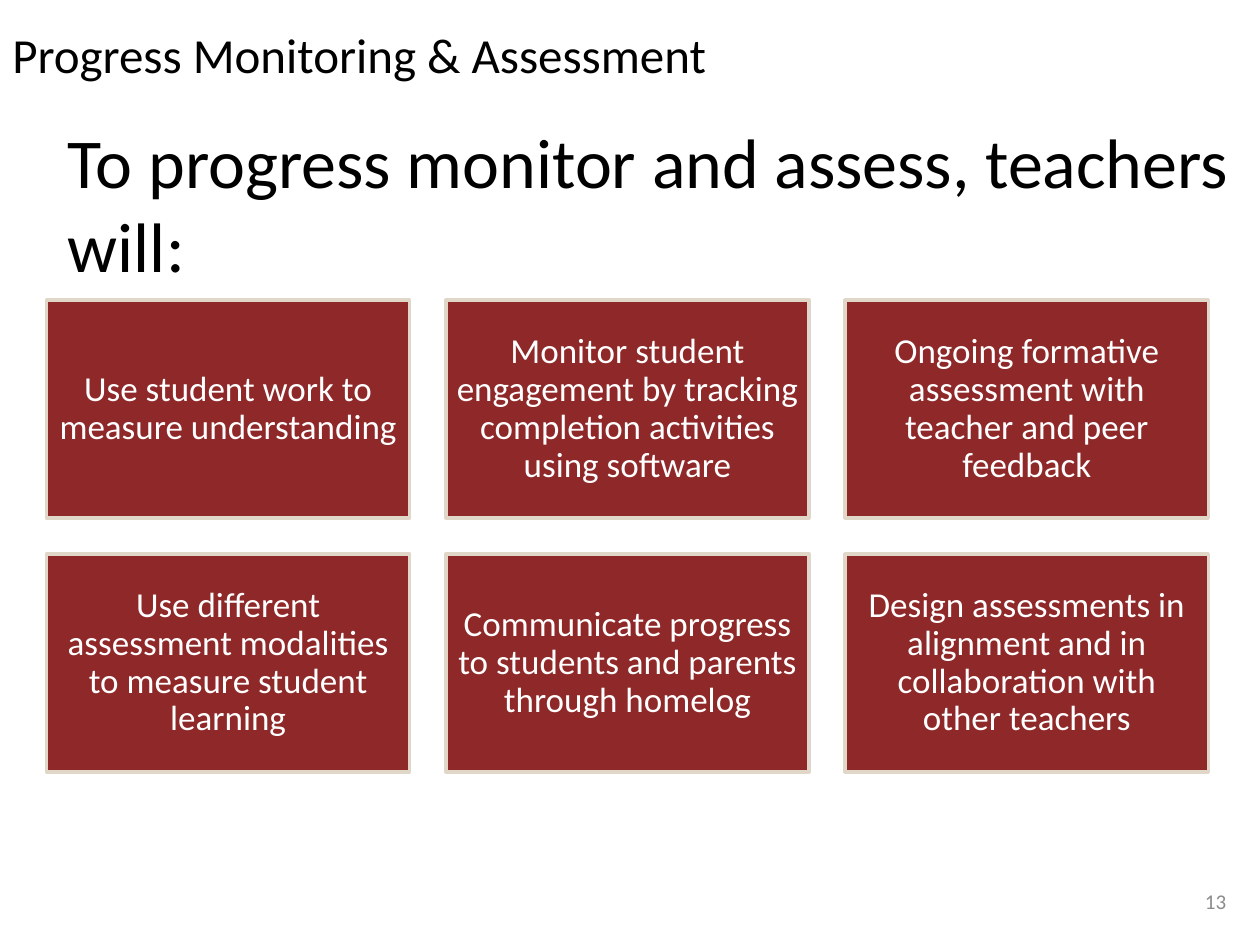
from pptx import Presentation
from pptx.dml.color import RGBColor
from pptx.enum.shapes import MSO_SHAPE
from pptx.enum.text import MSO_ANCHOR, MSO_AUTO_SIZE, PP_ALIGN
from pptx.util import Cm, Pt

FONT = "Calibri"
BLACK, WHITE, GREY = "000000", "FFFFFF", "8C8C8C"
CARD_FILL, CARD_LINE = "8F2828", "E1D7C9"

COLUMNS = 3
CARD_LEFT, CARD_TOP = 0.94, 6.05
CARD_WIDTH, CARD_HEIGHT = 7.32, 4.39
CARD_GAP = 0.73

PRACTICES = [
    "Use student work to measure understanding",
    "Monitor student engagement by tracking completion activities using software",
    "Ongoing formative assessment with teacher and peer feedback",
    "Use different assessment modalities to measure student learning",
    "Communicate progress to students and parents through homelog",
    "Design assessments in alignment and in collaboration with other teachers",
]


def color(value):
    return RGBColor.from_string(value)


def place(shape, left, top, width, height):
    shape.left, shape.top = Cm(left), Cm(top)
    shape.width, shape.height = Cm(width), Cm(height)


def write_text(shape, text, size, font_color=BLACK, align=PP_ALIGN.LEFT,
               line_spacing=1.0, side_inset=0.25, end_inset=0.13):
    frame = shape.text_frame
    frame.word_wrap = True
    frame.auto_size = MSO_AUTO_SIZE.NONE
    frame.vertical_anchor = MSO_ANCHOR.MIDDLE
    frame.margin_left = frame.margin_right = Cm(side_inset)
    frame.margin_top = frame.margin_bottom = Cm(end_inset)
    frame.text = text
    paragraph = frame.paragraphs[0]
    paragraph.alignment = align
    paragraph.line_spacing = line_spacing
    font = paragraph.runs[0].font
    font.name, font.size = FONT, Pt(size)
    font.color.rgb = color(font_color)


def add_title(slide, text):
    title = slide.shapes.title
    place(title, 1.12, 2.67, 24.97, 2.84)
    write_text(title, text, size=40)


def add_label(slide, text, left, top, width, height, **text_format):
    box = slide.shapes.add_textbox(Cm(left), Cm(top), Cm(width), Cm(height))
    write_text(box, text, **text_format)


def add_card(slide, text, left, top):
    card = slide.shapes.add_shape(
        MSO_SHAPE.RECTANGLE, Cm(left), Cm(top), Cm(CARD_WIDTH), Cm(CARD_HEIGHT))
    card.shadow.inherit = False
    card.fill.solid()
    card.fill.fore_color.rgb = color(CARD_FILL)
    card.line.color.rgb = color(CARD_LINE)
    card.line.width = Pt(2)
    write_text(card, text, size=20, font_color=WHITE, align=PP_ALIGN.CENTER,
               line_spacing=0.9, side_inset=0.2, end_inset=0.2)


def add_card_grid(slide, texts):
    for index, text in enumerate(texts):
        row, column = divmod(index, COLUMNS)
        add_card(slide, text,
                 CARD_LEFT + column * (CARD_WIDTH + CARD_GAP),
                 CARD_TOP + row * (CARD_HEIGHT + CARD_GAP))


def main():
    presentation = Presentation()
    presentation.slide_width, presentation.slide_height = Cm(25.4), Cm(19.05)
    slide = presentation.slides.add_slide(presentation.slide_layouts[5])
    add_title(slide, "To progress monitor and assess, teachers will:")
    add_card_grid(slide, PRACTICES)
    add_label(slide, "13", 22.76, 17.65, 2.21, 1.02,
              size=12, font_color=GREY, align=PP_ALIGN.RIGHT)
    add_label(slide, "Progress Monitoring & Assessment", 0, -0.03, 17.81, 2.24,
              size=28)
    presentation.save("out.pptx")


if __name__ == "__main__":
    main()
